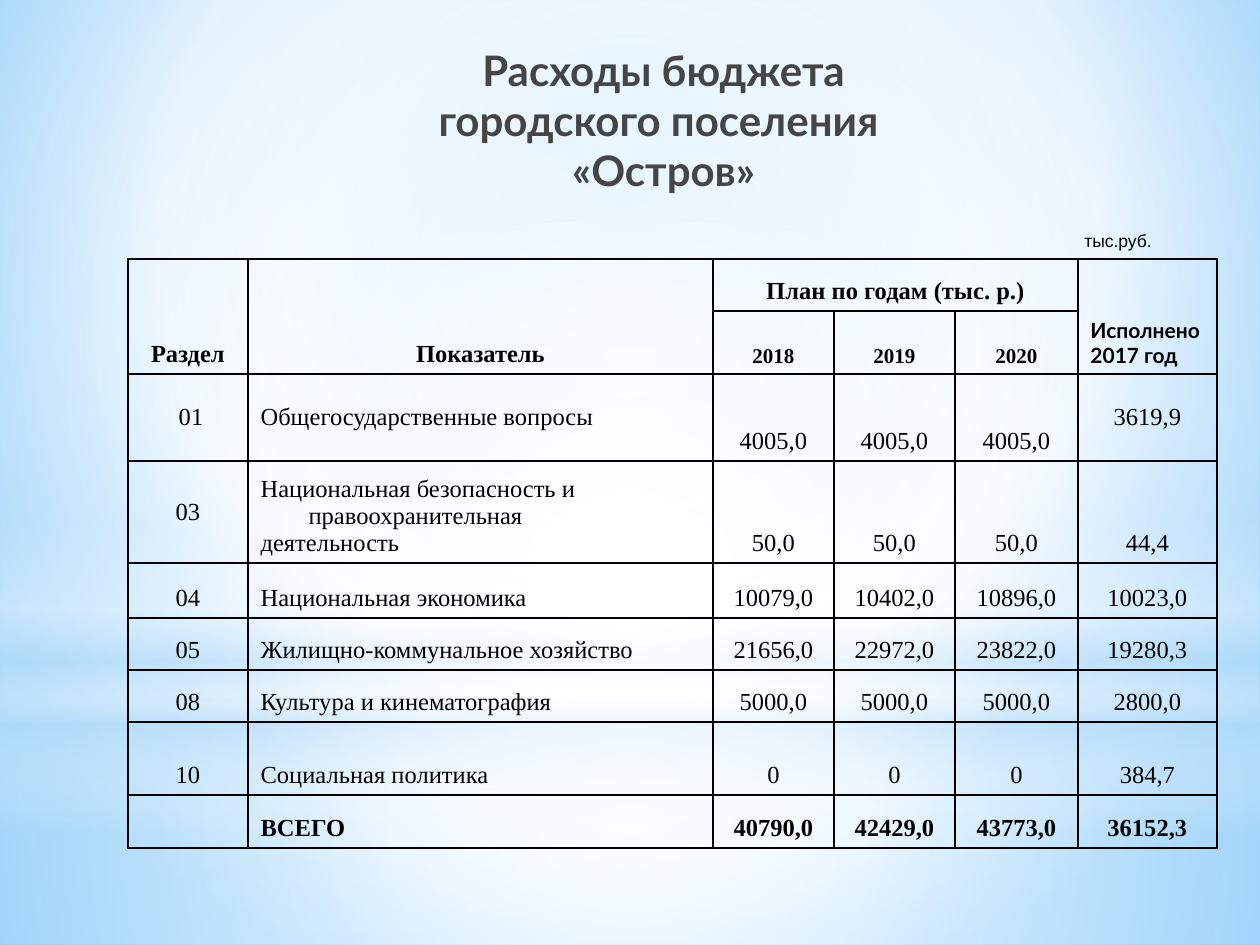
from lxml import etree
from pptx import Presentation
from pptx.dml.color import RGBColor
from pptx.enum.shapes import MSO_SHAPE
from pptx.enum.text import MSO_ANCHOR, MSO_AUTO_SIZE, PP_ALIGN
from pptx.oxml.ns import qn
from pptx.util import Emu, Pt

RECT, OVAL = MSO_SHAPE.RECTANGLE, MSO_SHAPE.OVAL
TOP, MIDDLE, BOTTOM = MSO_ANCHOR.TOP, MSO_ANCHOR.MIDDLE, MSO_ANCHOR.BOTTOM
LEFT, CENTER, RIGHT, JUSTIFY = PP_ALIGN.LEFT, PP_ALIGN.CENTER, PP_ALIGN.RIGHT, PP_ALIGN.JUSTIFY
NO_AUTOFIT = MSO_AUTO_SIZE.NONE

PX_PER_INCH = 126
SLIDE_W, SLIDE_H = 1260, 945
HANGING = 48
COLORS = {
    "text": "000000", "title": "454545", "white": "FFFFFF",
    "mist": "B4DCFA", "sky": "9ED5FF", "deep": "5BB9FF",
}
SERIF, SANS, PLAIN = "Times New Roman", "Lato", "Arial"

COLUMNS = [120, 465, 121, 121, 123, 139]
ROWS = [52, 63, 87, 102, 55, 52, 52, 73, 53]
YEARS = ["2018", "2019", "2020"]
EXPENSES = [
    [" 01", "Общегосударственные вопросы", "4005,0", "4005,0", "4005,0", "3619,9"],
    ["03", "Национальная безопасность и правоохранительная\nдеятельность",
     "50,0", "50,0", "50,0", "44,4"],
    ["04", "Национальная экономика", "10079,0", "10402,0", "10896,0", "10023,0"],
    ["05", "Жилищно-коммунальное хозяйство", "21656,0", "22972,0", "23822,0", "19280,3"],
    ["08", "Культура и кинематография", "5000,0", "5000,0", "5000,0", "2800,0"],
    ["10", "Социальная политика", "0", "0", "0", "384,7"],
    ["", "ВСЕГО", "40790,0", "42429,0", "43773,0", "36152,3"],
]
MIDDLE_CELLS = {(2, 0), (2, 1), (2, 5), (3, 0)}


def px(length):
    return Emu(round(length * 914400 / PX_PER_INCH))


def place(part, box):
    for name, length in zip(("left", "top", "width", "height"), box):
        setattr(part, name, px(length))


def sub(parent, tag, **attributes):
    return etree.SubElement(parent, qn(tag), {k: str(v) for k, v in attributes.items()})


def style_paragraph(paragraph, align, size, font, color="text", bold=False):
    paragraph.alignment = align
    values = {"size": Pt(size), "name": font, "bold": bold}
    for run in paragraph.runs:
        for name, value in values.items():
            setattr(run.font, name, value)
        run.font.color.rgb = RGBColor.from_string(COLORS[color])


def paint_gradient(fill, owner, stops, focus=None):
    """Radial towards the focus (l, t, r, b in percent), or vertical without one."""
    fill.gradient()
    gradient = owner.find(".//" + qn("a:gradFill"))
    for child in list(gradient):
        gradient.remove(child)
    stop_list = sub(gradient, "a:gsLst")
    for position, color, opacity in stops:
        stop = sub(stop_list, "a:gs", pos=position * 1000)
        tint = sub(stop, "a:srgbClr", val=COLORS[color])
        sub(tint, "a:alpha", val=opacity * 1000)
    if focus:
        radial = sub(gradient, "a:path", path="circle")
        sub(radial, "a:fillToRect", **{side: inset * 1000 for side, inset in zip("ltrb", focus)})
    else:
        sub(gradient, "a:lin", ang=5400000, scaled=0)


def add_backdrop(slide, box):
    left, top, width, height = box
    paint_gradient(slide.background.fill, slide.element,
                   [(0, "sky", 100), (60, "white", 100), (100, "deep", 100)], (20, 10, 20, 60))
    horizon = 703
    center = (50, 50, 50, 50)
    layers = [
        (RECT, horizon, height - horizon,
         [(0, "white", 91), (37, "white", 76), (100, "mist", 79)], center),
        (RECT, 0, horizon,
         [(0, "white", 89), (48, "white", 62), (100, "mist", 79)], center),
        (RECT, 519, 315,
         [(0, "white", 0), (29, "white", 30), (45, "mist", 40),
          (55, "white", 26), (65, "mist", 60), (100, "white", 0)], None),
        (OVAL, 220, horizon, [(0, "white", 100), (56, "white", 0)], center),
    ]
    for kind, offset, depth, stops, focus in layers:
        layer = slide.shapes.add_shape(kind, px(left), px(top + offset), px(width), px(depth))
        layer.shadow.inherit = False
        layer.line.fill.background()
        paint_gradient(layer.fill, layer.element, stops, focus)


def add_title(slide, box):
    title = slide.shapes.title
    place(title, box)
    slide.shapes.element.append(title.element)  # in front of the backdrop
    frame = title.text_frame
    frame.text = " Расходы бюджета\vгородского поселения\n «Остров»"
    settings = {"auto_size": NO_AUTOFIT, "vertical_anchor": TOP, "word_wrap": True,
                "margin_top": px(9)}
    for name, value in settings.items():
        setattr(frame, name, value)
    for paragraph in frame.paragraphs:
        paragraph.space_before = Pt(0)
        style_paragraph(paragraph, CENTER, 24, SANS, "title", True)


def add_unit_note(slide, box):
    note = slide.shapes.add_textbox(*map(px, box)).text_frame
    note.word_wrap = True
    note.text = "тыс.руб."
    style_paragraph(note.paragraphs[0], RIGHT, 10, PLAIN)


def add_borders(cell):
    properties = cell._tc.get_or_add_tcPr()
    for index, side in enumerate(("L", "R", "T", "B")):
        border = sub(properties, f"a:ln{side}", w=Pt(1))
        sub(sub(border, "a:solidFill"), "a:srgbClr", val=COLORS["text"])
        properties.insert(index, border)


def fill_cell(cell, text, align=CENTER, size=14, font=SERIF, bold=False,
              anchor=BOTTOM, hanging=HANGING):
    cell.vertical_anchor = anchor
    cell.text = text
    for paragraph in cell.text_frame.paragraphs:
        style_paragraph(paragraph, align, size, font, bold=bold)
        if hanging:
            indent = paragraph._p.get_or_add_pPr()
            indent.set("marL", str(px(hanging)))
            indent.set("indent", str(-px(hanging)))


def add_expense_table(slide, box):
    frame = slide.shapes.add_table(len(ROWS), len(COLUMNS), *map(px, box))
    table = frame.table
    table.first_row = table.horz_banding = False
    for column, width in zip(table.columns, COLUMNS):
        column.width = px(width)
    for row, height in zip(table.rows, ROWS):
        row.height = px(height)
    for cell in table.iter_cells():
        cell.fill.background()
        add_borders(cell)

    # Header
    for column in (0, 1, 5):
        table.cell(0, column).merge(table.cell(1, column))
    table.cell(0, 2).merge(table.cell(0, 4))
    for column, heading in ((0, "Раздел"), (1, "Показатель"), (2, "План по годам (тыс. р.)")):
        fill_cell(table.cell(0, column), heading, bold=True)
    fill_cell(table.cell(0, 5), "Исполнено 2017 год", LEFT, 12, SANS, True, hanging=0)
    for column, year in enumerate(YEARS, 2):
        fill_cell(table.cell(1, column), year, size=12, bold=True)

    # Expenses by section, total last
    for row, values in enumerate(EXPENSES, 2):
        for column, value in enumerate(values):
            if not value:
                continue
            align = CENTER if column != 1 else JUSTIFY if row == 4 else LEFT
            fill_cell(table.cell(row, column), value, align, bold=row == len(ROWS) - 1,
                      anchor=MIDDLE if (row, column) in MIDDLE_CELLS else BOTTOM)


def main():
    deck = Presentation()
    deck.slide_width, deck.slide_height = px(SLIDE_W), px(SLIDE_H)
    slide = deck.slides.add_slide(deck.slide_layouts[5])
    add_backdrop(slide, (0, 0, SLIDE_W, SLIDE_H))
    add_title(slide, (123, 35, 1071, 158))
    add_expense_table(slide, (128, 259, sum(COLUMNS), sum(ROWS)))
    add_unit_note(slide, (968, 224, 196, 34))
    deck.save("out.pptx")


if __name__ == "__main__":
    main()
